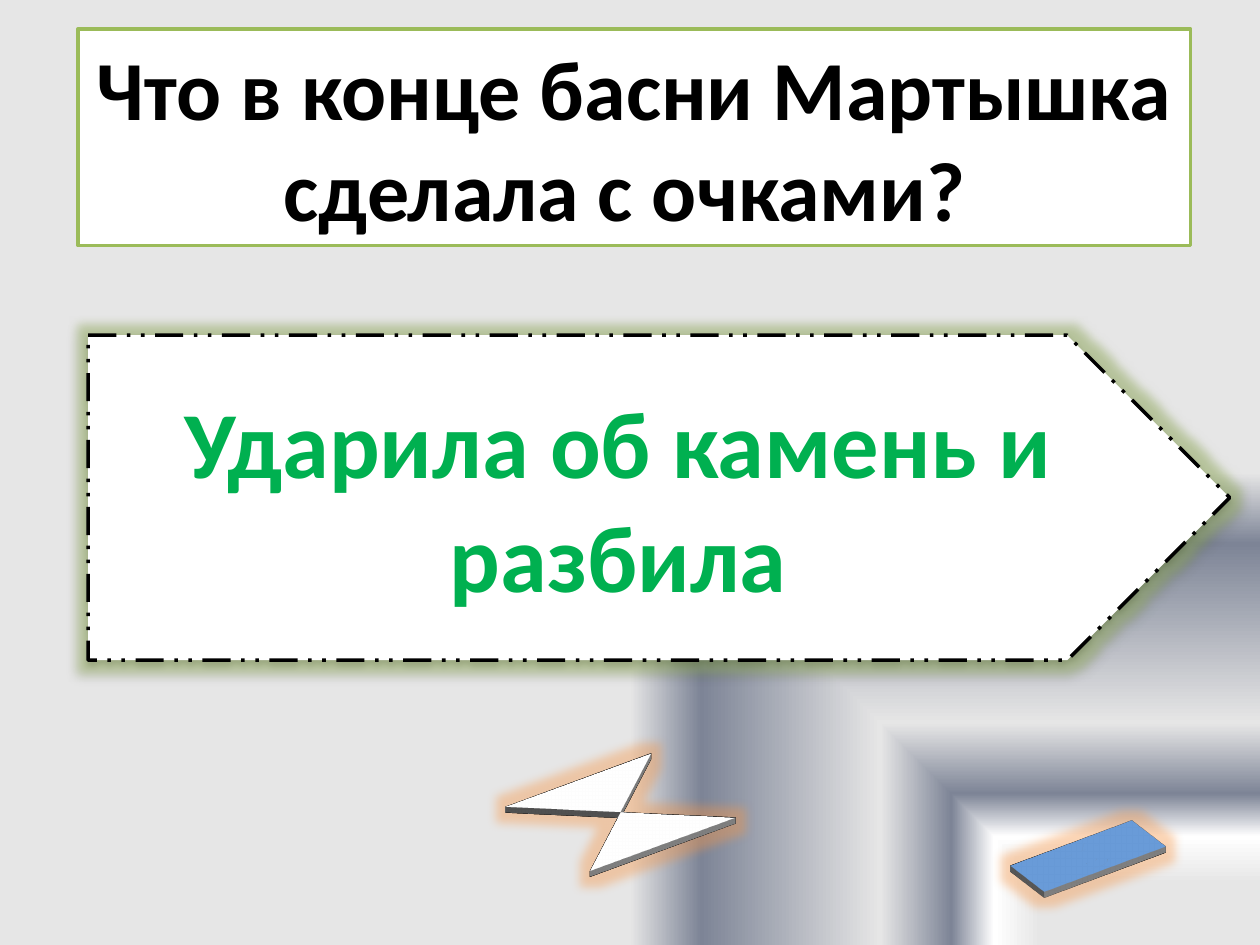
from dataclasses import dataclass

from pptx import Presentation
from pptx.dml.color import RGBColor
from pptx.enum.dml import MSO_LINE
from pptx.enum.shapes import MSO_SHAPE
from pptx.enum.text import MSO_ANCHOR, PP_ALIGN
from pptx.oxml import parse_xml
from pptx.oxml.ns import nsdecls, qn
from pptx.util import Inches, Pt


@dataclass(frozen=True)
class Theme:
    font: str = "Calibri"
    white: str = "FFFFFF"
    black: str = "000000"
    green: str = "9BBB59"
    answer: str = "00B050"
    blue: str = "4F81BD"
    orange: str = "F79646"
    title_size: int = 48
    answer_size: int = 54
    # Position in percent, colour, opacity in percent
    backdrop: tuple = (
        (13, "E6E6E6", 100), (23, "FFFFFF", 53), (32, "7D8496", 100),
        (47, "E6E6E6", 100), (85, "7D8496", 100), (100, "E6E6E6", 100),
    )


THEME = Theme()


def place(shape, box):
    shape.left, shape.top, shape.width, shape.height = map(Inches, box)


def paint(shape, fill, line, width):
    shape.fill.solid()
    shape.fill.fore_color.rgb = RGBColor.from_string(fill)
    shape.line.color.rgb = RGBColor.from_string(line)
    shape.line.width = Pt(width)


def write(shape, text, size, color):
    frame = shape.text_frame
    frame.word_wrap = True
    frame.vertical_anchor = MSO_ANCHOR.MIDDLE
    para = frame.paragraphs[0]
    para.alignment = PP_ALIGN.CENTER
    span = para.add_run()
    span.text = text
    span.font.name = THEME.font
    span.font.size = Pt(size)
    span.font.bold = True
    span.font.color.rgb = RGBColor.from_string(color)


def add_effects(shape, glow, blur, distance, angle, opacity):
    """Glow in the given colour over a black outer shadow."""
    shape.shadow.inherit = False
    effects = shape._element.spPr.find(qn("a:effectLst"))
    effects.append(parse_xml(
        f'<a:glow {nsdecls("a")} rad="{Pt(11)}"><a:srgbClr val="{glow}">'
        '<a:alpha val="40000"/></a:srgbClr></a:glow>'))
    effects.append(parse_xml(
        f'<a:outerShdw {nsdecls("a")} blurRad="{Pt(blur)}" dist="{Pt(distance)}" '
        f'dir="{angle * 60000}" algn="ctr" rotWithShape="0">'
        f'<a:srgbClr val="{THEME.black}"><a:alpha val="{opacity * 1000}"/>'
        '</a:srgbClr></a:outerShdw>'))


def tilt(shape):
    """Lay the shape back as a thin slab."""
    properties = shape._element.spPr
    properties.append(parse_xml(
        f'<a:scene3d {nsdecls("a")}><a:camera prst="orthographicFront">'
        '<a:rot lat="18960000" lon="19050000" rev="3162000"/></a:camera>'
        '<a:lightRig rig="threePt" dir="t"/></a:scene3d>'))
    properties.append(parse_xml(f'<a:sp3d {nsdecls("a")} extrusionH="{Pt(4)}"/>'))


def set_background(page):
    page.background.fill.solid()
    solid = page._element.find(".//" + qn("a:solidFill"))
    stops = "".join(
        f'<a:gs pos="{position * 1000}"><a:srgbClr val="{color}">'
        f'<a:alpha val="{opacity * 1000}"/></a:srgbClr></a:gs>'
        for position, color, opacity in THEME.backdrop)
    solid.getparent().replace(solid, parse_xml(
        f'<a:gradFill {nsdecls("a")} rotWithShape="1"><a:gsLst>{stops}</a:gsLst>'
        '<a:path path="rect"><a:fillToRect l="100000" t="100000"/></a:path>'
        '</a:gradFill>'))


def build_question(page, box):
    title = page.shapes.title
    place(title, box)
    paint(title, THEME.white, THEME.green, 2)
    write(title, "Что в конце басни Мартышка сделала с очками? ",
          THEME.title_size, THEME.black)


def build_answer(page, box):
    arrow = page.shapes.add_shape(MSO_SHAPE.PENTAGON, *map(Inches, box))
    paint(arrow, THEME.white, THEME.black, 2)
    arrow.line.dash_style = MSO_LINE.DASH_DOT_DOT
    add_effects(arrow, THEME.green, 3.5, 2.2, 90, 32)
    write(arrow, "Ударила об камень и разбила", THEME.answer_size, THEME.answer)


def build_slab(page, box, kind, fill):
    slab = page.shapes.add_shape(kind, *map(Inches, box))
    paint(slab, fill, THEME.white, 2.75)
    add_effects(slab, THEME.orange, 25, 0, 45, 43)
    tilt(slab)


def main():
    deck = Presentation()
    deck.slide_width, deck.slide_height = Inches(10), Inches(7.5)
    page = deck.slides.add_slide(deck.slide_layouts[5])
    set_background(page)
    build_question(page, (0.62, 0.23, 8.83, 1.72))
    build_slab(page, (4.22, 5.86, 1.41, 1.17), MSO_SHAPE.FLOWCHART_COLLATE, THEME.white)
    build_answer(page, (0.7, 2.66, 9.06, 2.58))
    build_slab(page, (8.05, 6.56, 1.17, 0.47), MSO_SHAPE.ACTION_BUTTON_RETURN, THEME.blue)
    deck.save("out.pptx")


if __name__ == "__main__":
    main()
